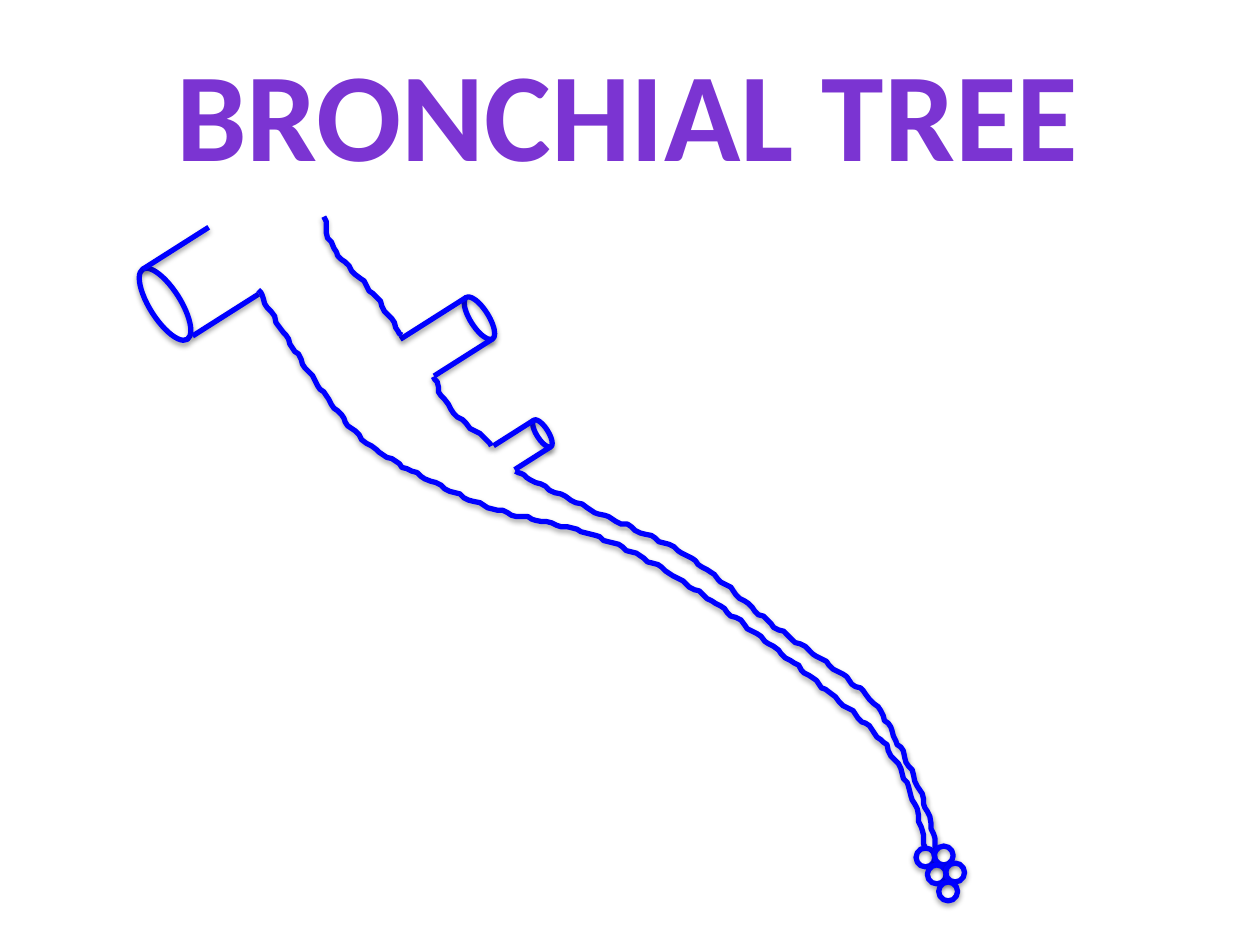
from dataclasses import dataclass
from itertools import accumulate
from math import ceil, cos, dist, pi, radians, sin

from lxml.etree import SubElement
from pptx import Presentation
from pptx.dml.color import RGBColor
from pptx.enum.shapes import MSO_CONNECTOR, MSO_SHAPE
from pptx.enum.text import MSO_ANCHOR, MSO_AUTO_SIZE, PP_ALIGN
from pptx.oxml.ns import qn
from pptx.util import Cm, Pt


@dataclass(frozen=True)
class Theme:
    font: str = "Calibri"
    title_size: Pt = Pt(72)
    title_color: RGBColor = RGBColor(0x7B, 0x34, 0xD2)
    line_color: RGBColor = RGBColor(0x00, 0x00, 0xFF)
    line_width: Pt = Pt(3)
    shadow_color: str = "000000"
    shadow_blur: Pt = Pt(3.1)
    shadow_distance: Pt = Pt(1.7)
    shadow_opacity: int = 36


@dataclass(frozen=True)
class Tube:
    center: tuple
    diameter: float
    upper_side: tuple
    lower_side: tuple


THEME = Theme()
GRID = Cm(2.54) // 100

TUBE_TILT = 57.6
RIM_FLATNESS = 0.37
TUBES = {
    "main bronchus": Tube((31, 141.5), 66, (0, 62), (5, 67)),
    "large branch": Tube((280.5, 152.5), 39, (0, -62), (0, -55)),
    "small branch": Tube((330.5, 244), 25, (0, -38), (0, -34)),
}

WALL_BENDS = {
    "outer wall": [
        (105, 130), (125, 164), (161, 217), (199, 257), (284, 301), (380, 328),
        (465, 377), (555, 447), (603, 492), (626, 538), (634, 572),
    ],
    "inner wall above large branch": [(157, 72), (165, 97), (196, 133), (219, 166)],
    "inner wall between branches": [(244, 199), (258, 225), (291, 253)],
    "inner wall below small branch": [
        (309, 274), (366, 303), (445, 341), (515, 397),
        (587, 451), (616, 497), (636, 544), (643, 574),
    ],
}
WALL_STEP = 4
RIPPLE_HEIGHT = 0.6
RIPPLE_LENGTH = 19

ALVEOLUS_SIZE = 15
ALVEOLI_START = (634.5, 580.5)
ALVEOLI_PER_ROW = (2, 2, 1)
ALVEOLI_ROW_SHIFT = (9, 13.5)
ALVEOLI_COLUMN_SHIFT = (14.5, -1.5)


def move(point, direction, distance):
    return tuple(value + distance * part for value, part in zip(point, direction))


def grid_position(box, point):
    return tuple(round(start + value * GRID) for start, value in zip(box, point))


def style_outline(shape):
    shape.line.color.rgb = THEME.line_color
    shape.line.width = THEME.line_width
    effects = SubElement(shape._element.spPr, qn("a:effectLst"))
    shadow = SubElement(
        effects, qn("a:outerShdw"), blurRad=str(THEME.shadow_blur),
        dist=str(THEME.shadow_distance), dir="5400000", rotWithShape="0",
    )
    color = SubElement(shadow, qn("a:srgbClr"), val=THEME.shadow_color)
    SubElement(color, qn("a:alpha"), val=str(THEME.shadow_opacity * 1000))


def add_ellipse(shapes, box, center, size, rotation=0):
    left, top = grid_position(box, move(center, size, -0.5))
    width, height = grid_position((0, 0), size)
    ellipse = shapes.add_shape(MSO_SHAPE.OVAL, left, top, width, height)
    ellipse.rotation = rotation
    ellipse.fill.background()
    style_outline(ellipse)


def add_tube(shapes, box, tube):
    group = shapes.add_group_shape()
    rim_size = (tube.diameter, tube.diameter * RIM_FLATNESS)
    add_ellipse(group.shapes, box, tube.center, rim_size, TUBE_TILT)
    angle = radians(TUBE_TILT)
    across = (cos(angle), sin(angle))
    along = (sin(angle), -cos(angle))
    radius = tube.diameter / 2
    for offset, side in ((-radius, tube.upper_side), (radius, tube.lower_side)):
        rim_point = move(tube.center, across, offset)
        start, end = (grid_position(box, move(rim_point, along, reach)) for reach in side)
        connector = group.shapes.add_connector(MSO_CONNECTOR.STRAIGHT, *start, *end)
        style_outline(connector)


def spline_value(before, start, end, after, t):
    return start + 0.5 * t * (
        end - before
        + t * (2 * before - 5 * start + 4 * end - after)
        + t * t * (3 * (start - end) + after - before)
    )


def smooth_curve(bends):
    padded = [bends[0], *bends, bends[-1]]
    points = [bends[0]]
    for span in zip(padded, padded[1:], padded[2:], padded[3:]):
        steps = ceil(dist(span[1], span[2]) / WALL_STEP)
        for step in range(1, steps + 1):
            points.append(tuple(spline_value(*values, step / steps) for values in zip(*span)))
    return points


def add_ripple(points):
    travelled = accumulate(map(dist, points, points[1:]), initial=0)
    return [
        move(point, (1, -1), RIPPLE_HEIGHT * sin(2 * pi * distance / RIPPLE_LENGTH))
        for point, distance in zip(points, travelled)
    ]


def add_wall(shapes, box, bends):
    points = add_ripple(smooth_curve(bends))
    builder = shapes.build_freeform(*points[0], scale=GRID)
    builder.add_line_segments(points[1:], close=False)
    wall = builder.convert_to_shape(*box)
    wall.fill.background()
    style_outline(wall)


def add_alveoli(shapes, box):
    group = shapes.add_group_shape()
    for row, count in enumerate(ALVEOLI_PER_ROW):
        row_start = move(ALVEOLI_START, ALVEOLI_ROW_SHIFT, row)
        for column in range(count):
            center = move(row_start, ALVEOLI_COLUMN_SHIFT, column)
            add_ellipse(group.shapes, box, center, (ALVEOLUS_SIZE, ALVEOLUS_SIZE))


def add_bronchial_tree(slide, box):
    for name, tube in TUBES.items():
        add_tube(slide.shapes, box, tube)
    for name, bends in WALL_BENDS.items():
        add_wall(slide.shapes, box, bends)
    add_alveoli(slide.shapes, box)


def add_title(slide, left, top, width, height):
    title = slide.shapes.title
    title.left, title.top, title.width, title.height = left, top, width, height
    frame = title.text_frame
    frame.word_wrap = False
    frame.auto_size = MSO_AUTO_SIZE.NONE
    frame.vertical_anchor = MSO_ANCHOR.TOP
    paragraph = frame.paragraphs[0]
    paragraph.alignment = PP_ALIGN.CENTER
    run = paragraph.add_run()
    run.text = "BRONCHIAL TREE"
    run.font.name = THEME.font
    run.font.size = THEME.title_size
    run.font.bold = True
    run.font.color.rgb = THEME.title_color


def main():
    presentation = Presentation()
    presentation.slide_width = Cm(25.4)
    presentation.slide_height = Cm(19.05)
    slide = presentation.slides.add_slide(presentation.slide_layouts[5])
    add_title(slide, Cm(3.2), Cm(0.58), Cm(18.9), Cm(3.33))
    add_bronchial_tree(slide, (Cm(2.54), Cm(2.54)))
    presentation.save("out.pptx")


if __name__ == "__main__":
    main()
